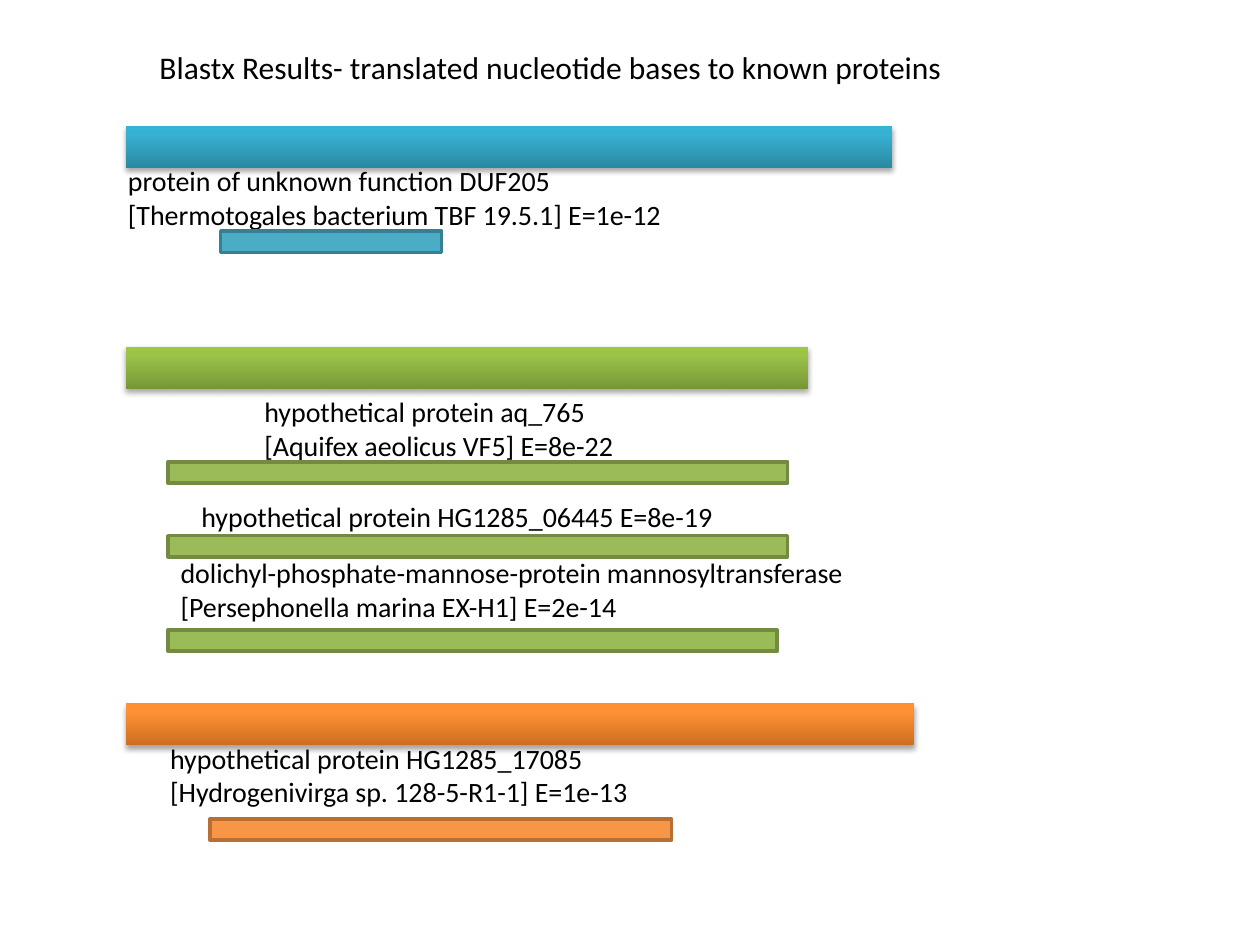
from copy import deepcopy

from lxml import etree
from pptx import Presentation
from pptx.dml.color import RGBColor as Rgb
from pptx.enum.shapes import MSO_SHAPE as Shape
from pptx.enum.text import MSO_ANCHOR as Anchor, MSO_AUTO_SIZE as AutoSize, PP_ALIGN as Align
from pptx.oxml import parse_xml
from pptx.oxml.ns import nsdecls, qn
from pptx.util import Cm, Pt

COLORS = {
    "text": "000000",
    "shadow": "000000",
    "blue": "4BACC6", "blue_line": "377F92",
    "green": "9BBB59", "green_line": "738A42",
    "orange": "F79646", "orange_line": "B76F34",
}
GRADIENTS = {
    "blue": ("2A88A2", "37B1D2", "34B4D6"),
    "green": ("779737", "9BC348", "9DC746"),
    "orange": ("CC6E20", "FF9034", "FF9136"),
}
STOPS = (0, 0.8, 1)


class BlastSlide:
    font = "Calibri"
    title_size = 18
    label_size = 16
    query_left = 2.54
    query_height = 0.85
    hit_height = 0.43

    def __init__(self, deck):
        self.page = deck.slides.add_slide(deck.slide_layouts[5])

    def set_text(self, box, lines, size):
        frame = box.text_frame
        frame.word_wrap = True
        frame.auto_size = AutoSize.SHAPE_TO_FIT_TEXT
        frame.vertical_anchor = Anchor.TOP
        frame.text = "\n".join(lines)
        for para in frame.paragraphs:
            para.alignment = Align.LEFT
            for span in para.runs:
                span.font.name = self.font
                span.font.size = Pt(size)
                span.font.color.rgb = Rgb.from_string(COLORS["text"])

    def title(self, left, top, width, height, text):
        box = self.page.shapes.title
        box.left, box.top, box.width, box.height = Cm(left), Cm(top), Cm(width), Cm(height)
        self.set_text(box, [text], self.title_size)

    def label(self, left, top, width, height, *lines):
        box = self.page.shapes.add_textbox(Cm(left), Cm(top), Cm(width), Cm(height))
        self.set_text(box, lines, self.label_size)

    def bar(self, left, top, width, height):
        box = self.page.shapes.add_shape(
            Shape.RECTANGLE, Cm(left), Cm(top), Cm(width), Cm(height))
        box.shadow.inherit = False
        return box

    def query(self, top, width, color):
        box = self.bar(self.query_left, top, width, self.query_height)
        box.line.fill.background()
        box.fill.gradient()
        box.fill.gradient_angle = 90
        properties = box._element.spPr
        stop_list = properties.find(qn("a:gradFill")).find(qn("a:gsLst"))
        stop_list.append(deepcopy(stop_list[-1]))
        for stop, position, shade in zip(box.fill.gradient_stops, STOPS, GRADIENTS[color]):
            stop.position = position
            stop.color.rgb = Rgb.from_string(shade)
        shadow = parse_xml(
            f'<a:outerShdw {nsdecls("a")} blurRad="{Pt(3.1)}" dist="{Pt(1.8)}" '
            'dir="5400000" rotWithShape="0"/>')
        tint = etree.SubElement(shadow, qn("a:srgbClr"), val=COLORS["shadow"])
        etree.SubElement(tint, qn("a:alpha"), val="35000")
        properties.find(qn("a:effectLst")).append(shadow)

    def hit(self, left, top, width, color):
        box = self.bar(left, top, width, self.hit_height)
        box.fill.solid()
        box.fill.fore_color.rgb = Rgb.from_string(COLORS[color])
        box.line.color.rgb = Rgb.from_string(COLORS[color + "_line"])
        box.line.width = Pt(2)


def main():
    deck = Presentation()
    deck.slide_width, deck.slide_height = Cm(25.4), Cm(19.05)
    slide = BlastSlide(deck)
    slide.title(2.96, 0.85, 20.11, 1.03,
                "Blastx Results- translated nucleotide bases to known proteins")

    slide.query(2.54, 15.45, "blue")
    slide.label(2.33, 3.18, 13.12, 1.63,
                "protein of unknown function DUF205",
                "[Thermotogales bacterium TBF 19.5.1] E=1e-12")
    slide.hit(4.45, 4.66, 4.45, "blue")

    slide.query(6.99, 13.76, "green")
    slide.label(5.08, 7.83, 8.68, 1.63,
                "hypothetical protein aq_765 [Aquifex aeolicus VF5] E=8e-22")
    slide.hit(3.39, 9.31, 12.49, "green")
    slide.label(3.81, 9.95, 12.91, 0.94,
                "hypothetical protein HG1285_06445 E=8e-19")
    slide.hit(3.39, 10.8, 12.49, "green")
    slide.label(3.39, 11.08, 15.03, 1.63,
                "dolichyl-phosphate-mannose-protein mannosyltransferase",
                "[Persephonella marina EX-H1] E=2e-14")
    slide.hit(3.39, 12.7, 12.28, "green")

    slide.label(3.18, 14.82, 12.28, 1.63,
                "hypothetical protein HG1285_17085",
                "[Hydrogenivirga sp. 128-5-R1-1] E=1e-13")
    slide.query(14.18, 15.88, "orange")
    slide.hit(4.23, 16.51, 9.31, "orange")

    deck.save("out.pptx")


if __name__ == "__main__":
    main()
